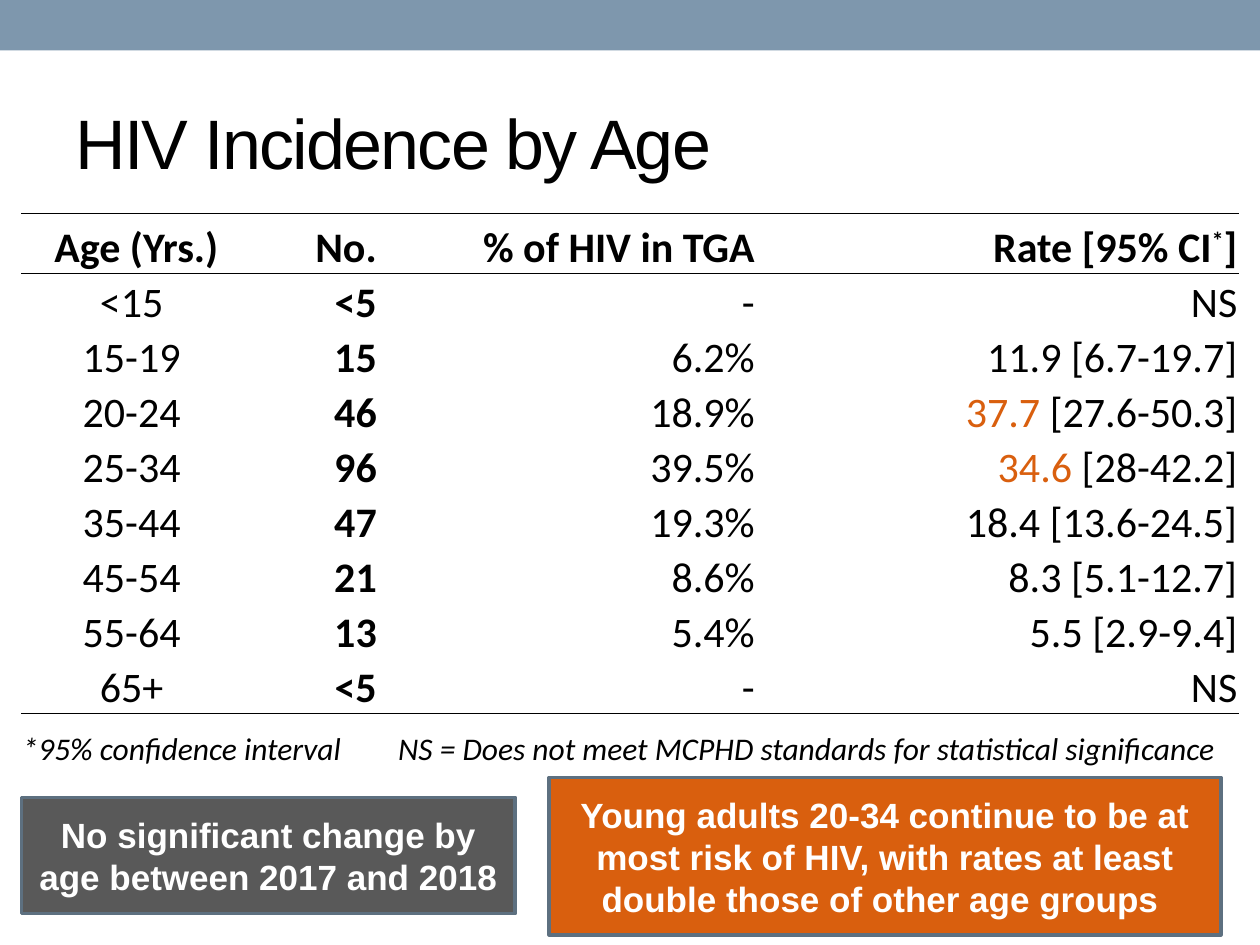
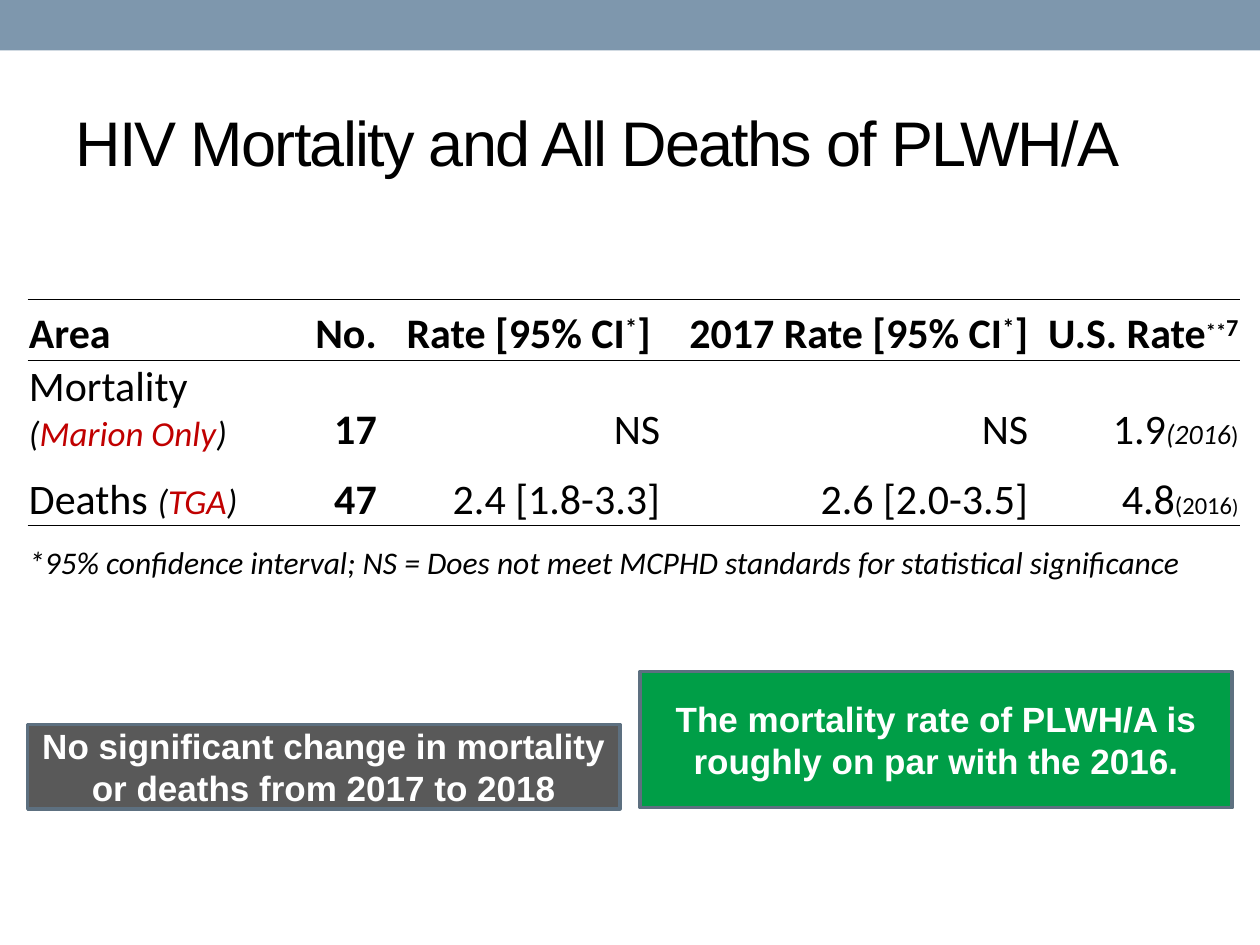
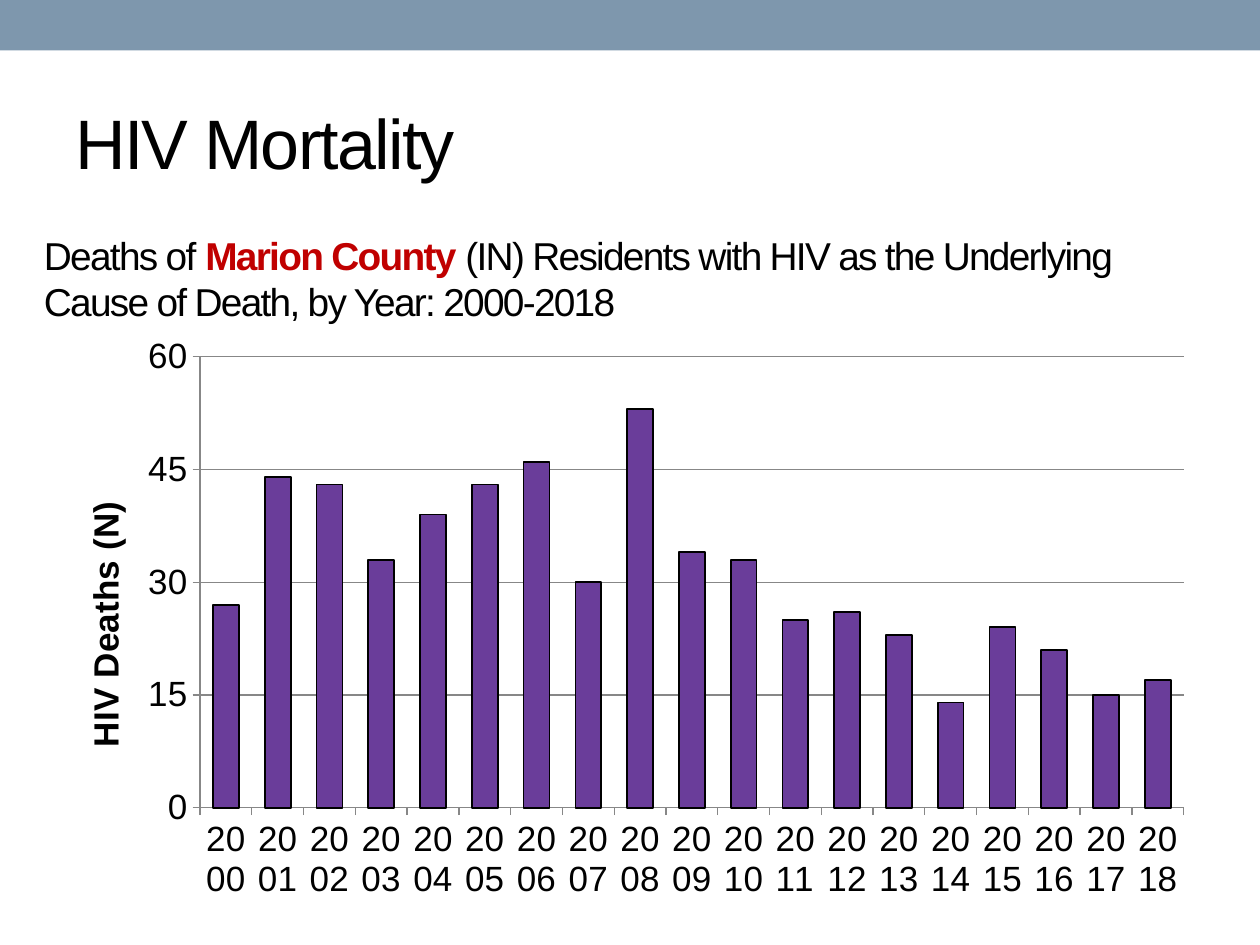
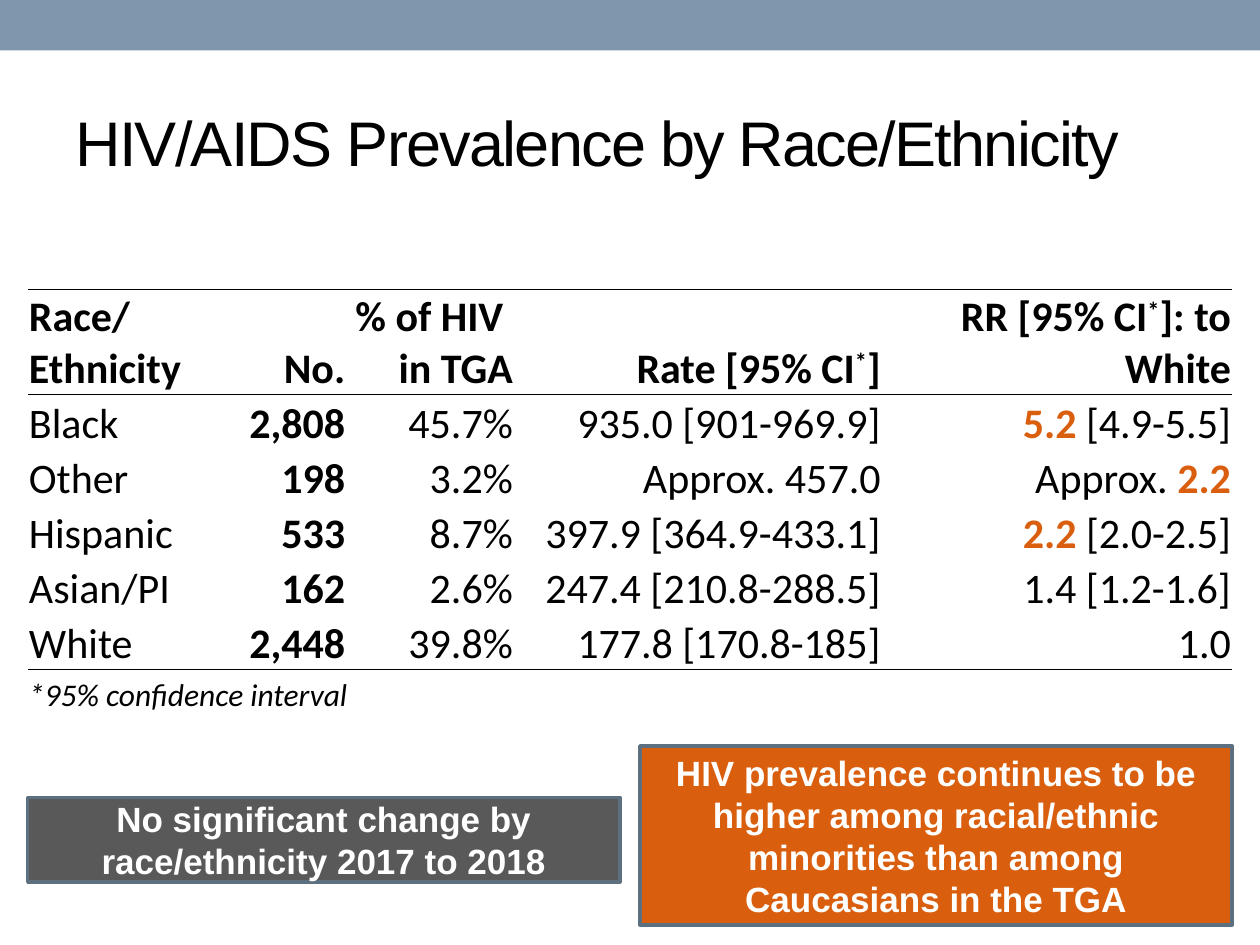
from dataclasses import dataclass
from typing import NamedTuple

from lxml import etree
from pptx import Presentation
from pptx.chart.data import CategoryChartData
from pptx.dml.color import RGBColor
from pptx.enum.chart import XL_CHART_TYPE, XL_TICK_MARK
from pptx.enum.shapes import MSO_SHAPE
from pptx.enum.text import MSO_ANCHOR, PP_ALIGN
from pptx.oxml.ns import qn
from pptx.util import Inches, Pt

STACK = XL_CHART_TYPE.COLUMN_STACKED
OUT = XL_TICK_MARK.OUTSIDE
RECT = MSO_SHAPE.RECTANGLE
MID, LOW = MSO_ANCHOR.MIDDLE, MSO_ANCHOR.BOTTOM
LEFT, MID_X, RIGHT = PP_ALIGN.LEFT, PP_ALIGN.CENTER, PP_ALIGN.RIGHT

BLACK, WHITE, BAND, EDGE = "000000", "FFFFFF", "7E97AD", "5D7080"
GRAY, ORANGE, GREEN, RED = "595959", "D95F0E", "009E47", "C00000"
PURPLE, GRID = "6A3D9A", "878787"
PLAIN = "{2D5ABB26-0587-4C30-8999-92F81FD0307C}"
BREAK = "\v"
ROW = 3.93 / 9

HEAD = {"name": "Arial", "size": Pt(40), "color": BLACK, "spc": -100}
LEAD = HEAD | {"size": Pt(22.2)}
CALL = {"name": "Arial", "size": Pt(20), "color": WHITE, "bold": True}
BODY = {"name": "Calibri", "size": Pt(24), "color": BLACK, "bold": False}
NOTE = {"size": Pt(18), "italic": True}
BOLD = {"bold": True}
SUPER = {"baseline": 30000}
HOT = {"color": ORANGE}
KEY = HOT | BOLD
SLANT = {"size": Pt(20), "italic": True}
PLACE = SLANT | {"color": RED}


class Run(NamedTuple):
    """A piece of text with its own format."""
    text: str
    form: dict = {}


class Area(NamedTuple):
    """Left, top, width and height in inches."""
    left: float
    top: float
    wide: float
    high: float

    def spot(self) -> list:
        """Return the four values as lengths."""
        return [Inches(size) for size in self]


@dataclass
class Box:
    """A filled callout."""
    area: Area
    fill: str
    text: str


@dataclass
class Grid:
    """A table with a header row, data rows and a closing note."""
    left: float
    top: float
    cols: list
    highs: list
    first: PP_ALIGN
    rows: list
    note: str
    end: float = 0.5
    tab: float = 0


def rate(text: str, tail: str = "]") -> list:
    """Return a heading with the raised star of the interval."""
    return [Run(text + " [95% CI"), Run("*", SUPER), Run(tail)]


def split(text: str, rest: str, form: dict) -> list:
    """Return a figure in its own format and the rest."""
    return [Run(text, form), Run(rest)]


def place(text: str, name: str) -> list:
    """Return a row label with its place in brackets."""
    return [Run(text + " "), Run("(", SLANT), Run(name, PLACE), Run(")", SLANT)]


def year(text: str, size: int, form: dict) -> list:
    """Return a rate followed by its small year."""
    return [Run(text), Run("(2016", {"size": Pt(size)} | form),
            Run(")", {"size": Pt(size - 2)})]


def tint(code: str) -> RGBColor:
    """Turn a hex string into a colour."""
    return RGBColor.from_string(code)


def style(font, form: dict) -> None:
    """Set the format values on a font."""
    for key, val in form.items():
        if key == "color":
            font.color.rgb = tint(val)
        else:
            setattr(font, key, val)


def write(frame, text, form: dict, align=LEFT) -> None:
    """Fill a text frame with one paragraph of runs."""
    para = frame.paragraphs[0]
    para.alignment = align
    for part in [Run(text)] if isinstance(text, str) else text:
        if part.text == BREAK:
            para.add_line_break()
            continue
        run = para.add_run()
        run.text = part.text
        full = form | part.form
        for key in ("spc", "baseline"):
            if key in full:
                run._r.get_or_add_rPr().set(key, str(full.pop(key)))
        style(run.font, full)


def label(slide, area: Area, text, form: dict) -> None:
    """Add a wrapped text box."""
    frame = slide.shapes.add_textbox(*area.spot()).text_frame
    frame.word_wrap = True
    frame.vertical_anchor = MID
    write(frame, text, form)


def block(slide, area: Area, fill: str):
    """Add a plain filled rectangle."""
    shape = slide.shapes.add_shape(RECT, *area.spot())
    shape.shadow.inherit = False
    shape.fill.solid()
    shape.fill.fore_color.rgb = tint(fill)
    shape.line.fill.background()
    return shape


def callout(slide, box: Box) -> None:
    """Add a rectangle with an edge and bold text."""
    shape = block(slide, box.area, box.fill)
    shape.line.color.rgb = tint(EDGE)
    shape.line.width = Pt(2.08)
    shape.text_frame.word_wrap = True
    shape.text_frame.vertical_anchor = MID
    write(shape.text_frame, box.text, CALL, MID_X)


def rule(cell, side: str, width: float) -> None:
    """Draw one edge of a cell, or clear it when the width is zero."""
    line = etree.SubElement(cell._tc.get_or_add_tcPr(), qn("a:" + side))
    if not width:
        etree.SubElement(line, qn("a:noFill"))
        return
    line.set("w", str(Pt(width)))
    fill = etree.SubElement(line, qn("a:solidFill"))
    etree.SubElement(fill, qn("a:srgbClr"), val=BLACK)


def table(slide, grid: Grid) -> None:
    """Draw a ruled table."""
    count, last = len(grid.cols), len(grid.rows)
    area = Area(grid.left, grid.top, sum(grid.cols), sum(grid.highs))
    tab = slide.shapes.add_table(last + 1, count, *area.spot()).table
    tab.first_row = tab.horz_banding = False
    tab._tbl.tblPr[0].text = PLAIN
    for col, wide in zip(tab.columns, grid.cols):
        col.width = Inches(wide)
    for row, high in zip(tab.rows, grid.highs):
        row.height = Inches(high)
    tab.cell(last, 0).merge(tab.cell(last, count - 1))
    edges = {0: 0.5, 1: 0.5, last: grid.end}
    form = {"margin_left": Inches(0.01), "margin_right": Inches(0.01),
            "margin_top": Inches(0.01), "margin_bottom": 0,
            "vertical_anchor": LOW}
    for i in range(last + 1):
        sides = {"lnL": 0, "lnR": 0, "lnT": edges.get(i, 0),
                 "lnB": edges.get(i + 1, 0)}
        for j in range(count):
            cell = tab.cell(i, j)
            for key, val in form.items():
                setattr(cell, key, val)
            for side, width in sides.items():
                rule(cell, side, width)
            cell.fill.background()
            if i < last:
                bold = {"bold": i == 0 or j == 1}
                write(cell.text_frame, grid.rows[i][j], BODY | bold,
                      RIGHT if j else grid.first)
    foot = tab.cell(last, 0).text_frame
    write(foot, grid.note, BODY | NOTE)
    if grid.tab:
        stops = etree.SubElement(foot.paragraphs[0]._p.get_or_add_pPr(),
                                 qn("a:tabLst"))
        etree.SubElement(stops, qn("a:tab"), pos=str(Inches(grid.tab)), algn="l")


def layout(item, index: int, spots: dict) -> None:
    """Fix the place of a chart part."""
    for old in item.findall(qn("c:layout")):
        item.remove(old)
    shell = etree.Element(qn("c:layout"))
    item.insert(index, shell)
    hand = etree.SubElement(shell, qn("c:manualLayout"))
    for key, val in spots.items():
        etree.SubElement(hand, qn("c:" + key), val=str(val))


def chart(slide, area: Area, cats: list, vals: list) -> None:
    """Draw the yearly column chart."""
    data = CategoryChartData()
    data.categories = cats
    data.add_series("Series 1", vals)
    graph = slide.shapes.add_chart(STACK, *area.spot(), data).chart
    graph.has_legend = graph.has_title = False
    base = {"name": "Arial", "size": Pt(20), "color": BLACK}
    style(graph.font, base)
    plot = graph.plots[0]
    plot.gap_width = plot.overlap = 100
    plot.vary_by_categories = False
    bars = plot.series[0].format
    bars.fill.solid()
    bars.fill.fore_color.rgb = tint(PURPLE)
    bars.line.color.rgb = tint(BLACK)
    bars.line.width = Pt(1)
    axis, years = graph.value_axis, graph.category_axis
    form = {"minimum_scale": 0, "maximum_scale": 60, "major_unit": 15,
            "has_major_gridlines": True, "has_title": True}
    for key, val in form.items():
        setattr(axis, key, val)
    axis.tick_labels.number_format = "#,##0"
    axis.tick_labels.number_format_is_linked = False
    write(axis.axis_title.text_frame, "HIV Deaths (N)", base | BOLD, MID_X)
    for item in (axis, years):
        item.major_tick_mark = OUT
        item.format.line.color.rgb = tint(GRID)
        style(item.tick_labels.font, base)
    axis.major_gridlines.format.line.color.rgb = tint(GRID)
    body = years._element.find(qn("c:txPr")).find(qn("a:bodyPr"))
    body.set("rot", "0")
    body.set("vert", "horz")
    skip = etree.Element(qn("c:tickLblSkip"), val="1")
    years._element.find(qn("c:noMultiLvlLbl")).addprevious(skip)
    edge = {"xMode": "edge", "yMode": "edge"}
    layout(graph._chartSpace.chart.plotArea, 0, {"layoutTarget": "inner"} | edge
           | {"x": 0.136, "y": 0.054, "w": 0.844, "h": 0.77})
    layout(axis.axis_title._element, 1, edge | {"x": 0.03, "y": 0.29})


def page(deck, title: str, size: int = 40, wide: float = 9):
    """Add a slide with its band and title."""
    slide = deck.slides.add_slide(deck.slide_layouts[6])
    block(slide, Area(0, 0, 10, 0.4), BAND)
    label(slide, Area(0.5, 0.58, wide, 1.08), title, HEAD | {"size": Pt(size)})
    return slide


AGES = Grid(
    0.17, 1.69, [1.75, 1.08, 3, 3.83], [0.48] + [ROW] * 9, MID_X,
    [[" Age (Yrs.)", "No.", "% of HIV in TGA", rate("Rate")],
     ["<15", "<5", "-", "NS"],
     ["15-19", "15", "6.2%", "11.9 [6.7-19.7]"],
     ["20-24", "46", "18.9%", split("37.7 ", "[27.6-50.3]", HOT)],
     ["25-34", "96", "39.5%", split("34.6 ", "[28-42.2]", HOT)],
     ["35-44", "47", "19.3%", "18.4 [13.6-24.5]"],
     ["45-54", "21", "8.6%", "8.3 [5.1-12.7]"],
     ["55-64", "13", "5.4%", "5.5 [2.9-9.4]"],
     ["65+", "<5", "-", "NS"]],
    "*95% confidence interval\tNS = Does not meet MCPHD standards"
    " for statistical significance", end=1, tab=2.98)

DEATHS = Grid(
    0.22, 2.38, [2.2, 0.58, 2.25, 2.92, 1.67], [0.48, 0.76, 0.55, 0.46], LEFT,
    [["Area", "No.", rate("Rate", "] "), rate("2017 Rate"),
      [Run("U.S. Rate"), Run("**", SUPER | {"size": Pt(20)}), Run("7", SUPER)]],
     [place("Mortality", "Marion Only"), "17", "NS", "NS",
      year("1.9", 16, {"italic": True})],
     [place("Deaths", "TGA"), "47", "2.4 [1.8-3.3]", "2.6 [2.0-3.5]",
      year("4.8", 14, {})]],
    "*95% confidence interval; NS = Does not meet MCPHD standards"
    " for statistical significance")

RACES = Grid(
    0.22, 2.3, [1.53, 1, 1.33, 2.92, 2.78], [0.83] + [ROW] * 5 + [0.36], LEFT,
    [["Race/ Ethnicity", "No.",
      [Run("% of HIV "), Run(BREAK), Run("in TGA")], rate("Rate"),
      rate("RR", "]: to White")],
     ["Black", "2,808", "45.7%", "935.0 [901-969.9]",
      split("5.2", " [4.9-5.5]", KEY)],
     ["Other", "198", "3.2%", "Approx. 457.0",
      [Run("Approx. "), Run("2.2", KEY)]],
     ["Hispanic", "533", "8.7%", "397.9 [364.9-433.1]",
      split("2.2", " [2.0-2.5]", KEY)],
     ["Asian/PI", "162", "2.6%", "247.4 [210.8-288.5]", "1.4 [1.2-1.6]"],
     ["White", "2,448", "39.8%", "177.8 [170.8-185]", "1.0"]],
    "*95% confidence interval")

COUNTS = [27, 44, 43, 33, 39, 43, 46, 30, 53, 34,
          33, 25, 26, 23, 14, 24, 21, 15, 17]


def main() -> None:
    """Build and save the deck."""
    deck = Presentation()
    deck.slide_width, deck.slide_height = Inches(10), Inches(7.5)

    slide = page(deck, "HIV Incidence by Age")
    table(slide, AGES)
    callout(slide, Box(Area(0.17, 6.33, 3.92, 0.92), GRAY,
                       "No significant change by age between 2017 and 2018"))
    callout(slide, Box(Area(4.36, 6.17, 5.33, 1.25), ORANGE,
                       "Young adults 20-34 continue to be at most risk of HIV, "
                       "with rates at least double those of other age groups "))

    slide = page(deck, "HIV Mortality and All Deaths of PLWH/A", 36, 9.33)
    table(slide, DEATHS)
    callout(slide, Box(Area(0.22, 5.75, 4.7, 0.67), GRAY,
                       "No significant change in mortality or deaths "
                       "from 2017 to 2018"))
    callout(slide, Box(Area(5.08, 5.33, 4.7, 1.08), GREEN,
                       "The mortality rate of PLWH/A is roughly on par "
                       "with the 2016."))

    slide = page(deck, "HIV Mortality")
    label(slide, Area(0.25, 1.83, 9.42, 0.75),
          [Run("Deaths of "), Run("Marion County", BOLD | {"color": RED}),
           Run(" (IN) Residents with HIV as the Underlying Cause of Death, "
               "by Year: 2000-2018")], LEAD)
    chart(slide, Area(0.33, 2.58, 9.25, 4.65),
          [str(num) for num in range(2000, 2019)], COUNTS)

    slide = page(deck, "HIV/AIDS Prevalence by Race/Ethnicity", 36)
    callout(slide, Box(Area(0.22, 6.33, 4.7, 0.67), GRAY,
                       "No significant change by race/ethnicity 2017 to 2018"))
    callout(slide, Box(Area(5.08, 5.92, 4.7, 1.42), ORANGE,
                       "HIV prevalence continues to be higher among racial/ethnic "
                       "minorities than among Caucasians in the TGA"))
    table(slide, RACES)
    deck.save("out.pptx")


if __name__ == "__main__":
    main()
